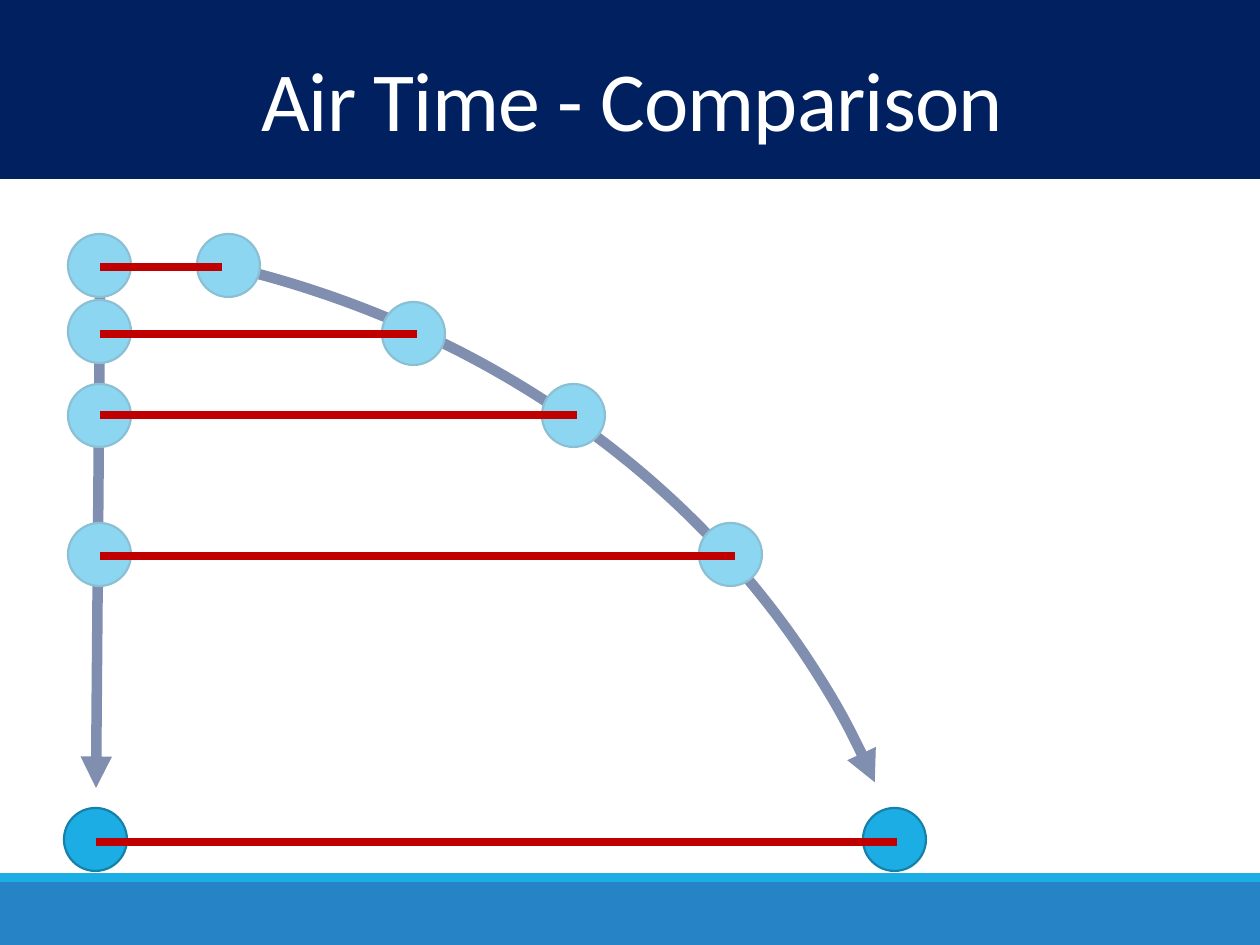
from lxml import etree
from pptx import Presentation
from pptx.dml.color import RGBColor
from pptx.enum.shapes import MSO_CONNECTOR as Link, MSO_SHAPE as Kind
from pptx.enum.text import MSO_ANCHOR as Anchor, PP_ALIGN as Align
from pptx.oxml.ns import qn
from pptx.util import Pt

PX = 9144000 / 1260  # EMU per px, 126 px to the inch
HUES = {"navy": "002060", "sky": "1CADE4", "blue": "2683C6",
        "rim": "1580A9", "red": "C00000", "white": "FFFFFF"}


def shape(kind, box, fill=None, line=None, width=1):
    item = slide.shapes.add_shape(kind, *[round(n * PX) for n in box])
    item.shadow.inherit = False
    if fill:
        item.fill.solid()
        item.fill.fore_color.rgb = RGBColor.from_string(HUES[fill])
    else:
        item.fill.background()
    if line:
        item.line.color.rgb = RGBColor.from_string(HUES[line])
        item.line.width = Pt(width)
    else:
        item.line.fill.background()
    return item


def link(ends, hue, width):
    item = slide.shapes.add_connector(
        Link.STRAIGHT, *[round(n * PX) for n in ends])
    item.line.color.rgb = RGBColor.from_string(HUES[hue])
    item.line.width = Pt(width)
    etree.SubElement(item.element.spPr, qn("a:effectLst"))
    return item


deck = Presentation()
deck.slide_width = round(1260 * PX)
deck.slide_height = round(945 * PX)
slide = deck.slides.add_slide(deck.slide_layouts[5])
title = slide.shapes.title

# Ground
shape(Kind.RECTANGLE, (0, 882, 1260, 63), "blue")
shape(Kind.RECTANGLE, (0, 873, 1260, 9), "sky")

# Paths: thrown ball and dropped ball
curve = shape(Kind.ARC, (-973, 238, 1914, 1716), None, "navy", 6)
for n, angle in enumerate((286.3, 340.6)):
    curve.adjustments[n] = angle * 0.6  # 60000ths of a degree over 100000
drop = link((100, 297, 96, 788), "navy", 6)
for path in (curve, drop):
    etree.SubElement(path.line._get_or_add_ln(), qn("a:tailEnd"),
                     type="triangle")

# Title band
band = shape(Kind.RECTANGLE, (0, 0, 1260, 179), "navy")
title.element.addprevious(band.element)
title.left, title.top, title.width, title.height = [
    round(n * PX) for n in (4, 53, 1256, 106)]
frame = title.text_frame
frame.text = "Air Time - Comparison"
frame.vertical_anchor = Anchor.MIDDLE
para = frame.paragraphs[0]
para.alignment = Align.CENTER
para.line_spacing = 0.85
run = para.runs[0]
run.font.name = "Calibri"
run.font.size = Pt(48)
run.font.color.rgb = RGBColor.from_string(HUES["white"])
run.font._element.set("spc", "-50")

# Each moment: dropped ball, thrown ball, and the level line between them
# (left x, left y, right x, right y, line end, line y)
times = [
    (68, 234, 197, 234, 222, 267),
    (68, 300, 382, 302, 417, 334),
    (68, 384, 542, 384, 577, 415),
    (68, 523, 699, 523, 735, 556),
    (64, 808, 863, 808, 897, 842),
]
BALL = 63
for x1, y1, x2, y2, end, level in times:
    for x, y in ((x1, y1), (x2, y2)):
        shape(Kind.OVAL, (x, y, BALL, BALL), "sky", "rim", 1.25)

# Half-clear veil over the flight
veil = shape(Kind.RECTANGLE, (42, 218, 901, 572), "white")
hue = veil.element.spPr.find(qn("a:solidFill"))[0]
etree.SubElement(hue, qn("a:alpha"), val="50000")

for x1, y1, x2, y2, end, level in times:
    link((x1 + BALL // 2 + 1, level, end, level), "red", 4.5)

deck.save("out.pptx")
